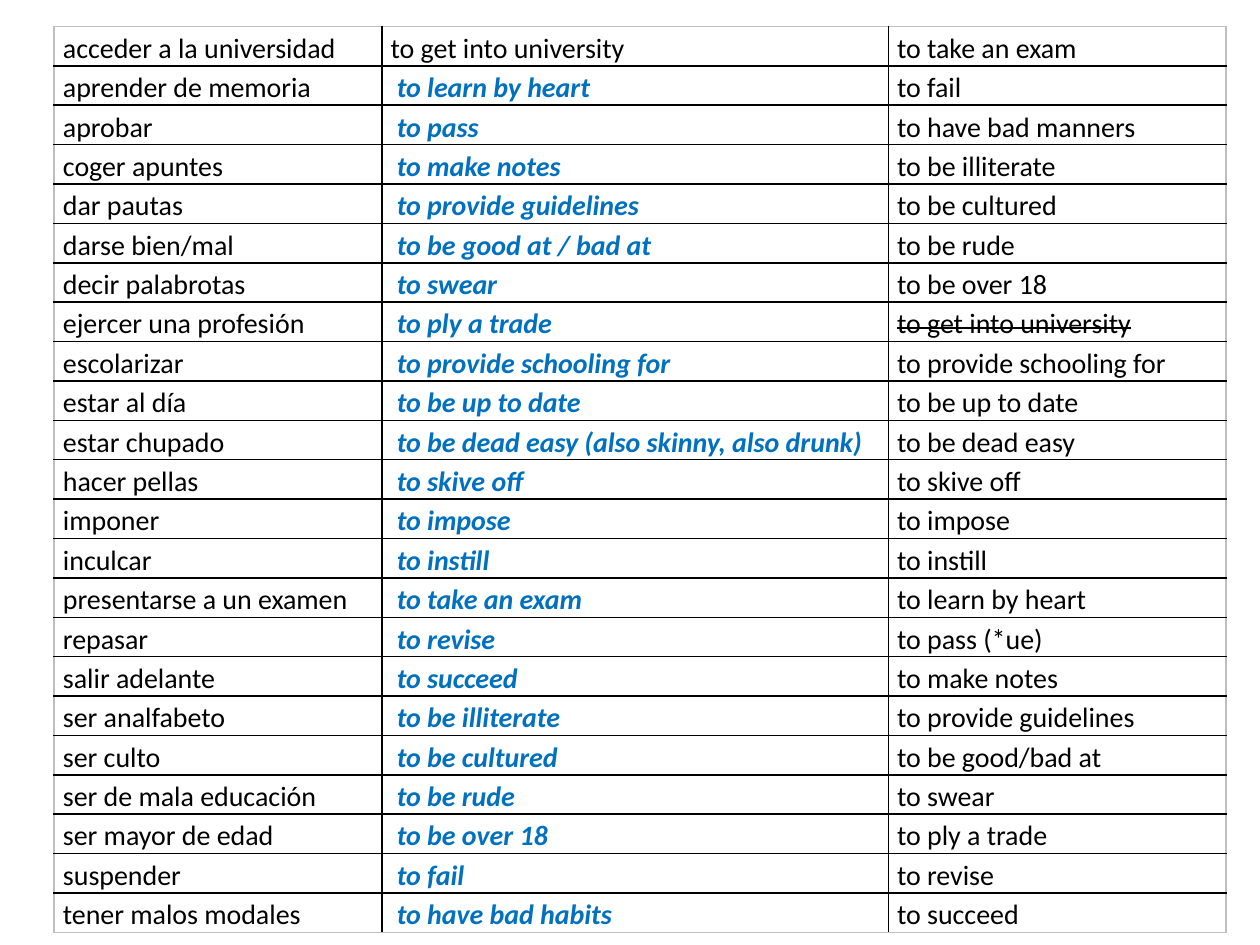
import lxml.etree
import pptx
import pptx.dml.color
import pptx.oxml.ns
import pptx.util

Inches = pptx.util.Inches

# Spanish phrase, answer, word bank entry
VOCABULARY = [
    ("acceder a la universidad", "to get into university", "to take an exam"),
    ("aprender de memoria", "to learn by heart", "to fail"),
    ("aprobar", "to pass", "to have bad manners"),
    ("coger apuntes", "to make notes", "to be illiterate"),
    ("dar pautas", "to provide guidelines", "to be cultured"),
    ("darse bien/mal", "to be good at / bad at", "to be rude"),
    ("decir palabrotas", "to swear", "to be over 18"),
    ("ejercer una profesión", "to ply a trade", "to get into university"),
    ("escolarizar", "to provide schooling for", "to provide schooling for"),
    ("estar al día", "to be up to date", "to be up to date"),
    ("estar chupado", "to be dead easy (also skinny, also drunk)", "to be dead easy"),
    ("hacer pellas", "to skive off", "to skive off"),
    ("imponer", "to impose", "to impose"),
    ("inculcar", "to instill", "to instill"),
    ("presentarse a un examen", "to take an exam", "to learn by heart"),
    ("repasar", "to revise", "to pass (*ue)"),
    ("salir adelante", "to succeed", "to make notes"),
    ("ser analfabeto", "to be illiterate", "to provide guidelines"),
    ("ser culto", "to be cultured", "to be good/bad at"),
    ("ser de mala educación", "to be rude", "to swear"),
    ("ser mayor de edad", "to be over 18", "to ply a trade"),
    ("suspender", "to fail", "to revise"),
    ("tener malos modales", "to have bad habits", "to succeed"),
]
EXAMPLE = VOCABULARY[0][1]  # already solved, so struck out of the word bank
ANSWER, BANK = 1, 2

THEME = {
    "font": "Calibri", "size": 16, "spacing": 1.15,
    "text": "000000", "answer": "0070C0",
    "grid": "000000", "frame": "BFBFBF", "line": 1,
}
LEFT, TOP = 0.43, 0.21
COLUMN_WIDTHS = [2.6, 4.02, 2.68]
ROW_HEIGHT = 0.31
MARGIN, ANSWER_MARGIN = 0.07, 0.12


def draw_borders(cell, edges):
    """Line each side; edges maps a side to True where it is on the frame."""
    properties = cell._tc.get_or_add_tcPr()
    qn = pptx.oxml.ns.qn
    for side, on_frame in edges.items():
        line = lxml.etree.SubElement(properties, qn(f"a:ln{side}"),
                                     w=str(pptx.util.Pt(THEME["line"])))
        fill = lxml.etree.SubElement(line, qn("a:solidFill"))
        lxml.etree.SubElement(fill, qn("a:srgbClr"),
                              val=THEME["frame" if on_frame else "grid"])


def write_phrase(cell, phrase, is_answer, is_struck):
    cell.margin_left = Inches(ANSWER_MARGIN if is_answer else MARGIN)
    cell.margin_right = Inches(MARGIN)
    cell.margin_top = cell.margin_bottom = 0
    cell.text_frame.text = phrase
    paragraph = cell.text_frame.paragraphs[0]
    paragraph.line_spacing = THEME["spacing"]
    font = paragraph.runs[0].font
    font.name = THEME["font"]
    font.size = pptx.util.Pt(THEME["size"])
    font.bold = font.italic = is_answer
    font.color.rgb = pptx.dml.color.RGBColor.from_string(
        THEME["answer" if is_answer else "text"])
    if is_struck:
        paragraph.runs[0]._r.get_or_add_rPr().set("strike", "sngStrike")


def main():
    deck = pptx.Presentation()
    deck.slide_width, deck.slide_height = Inches(10), Inches(7.5)
    slide = deck.slides.add_slide(deck.slide_layouts[6])

    # Vocabulary table
    row_count, column_count = len(VOCABULARY), len(COLUMN_WIDTHS)
    vocabulary = slide.shapes.add_table(
        row_count, column_count, Inches(LEFT), Inches(TOP),
        Inches(sum(COLUMN_WIDTHS)), Inches(ROW_HEIGHT * row_count)).table
    vocabulary.first_row = vocabulary.horz_banding = False
    for column, width in zip(vocabulary.columns, COLUMN_WIDTHS):
        column.width = Inches(width)

    # Phrases, grid and outer frame
    for r, phrases in enumerate(VOCABULARY):
        vocabulary.rows[r].height = Inches(ROW_HEIGHT)
        for c, phrase in enumerate(phrases):
            cell = vocabulary.cell(r, c)
            write_phrase(cell, phrase,
                         is_answer=c == ANSWER and phrase != EXAMPLE,
                         is_struck=c == BANK and phrase == EXAMPLE)
            draw_borders(cell, {"L": c == 0, "R": c == column_count - 1,
                                "T": r == 0, "B": r == row_count - 1})
            cell.fill.background()

    deck.save("out.pptx")


if __name__ == "__main__":
    main()
